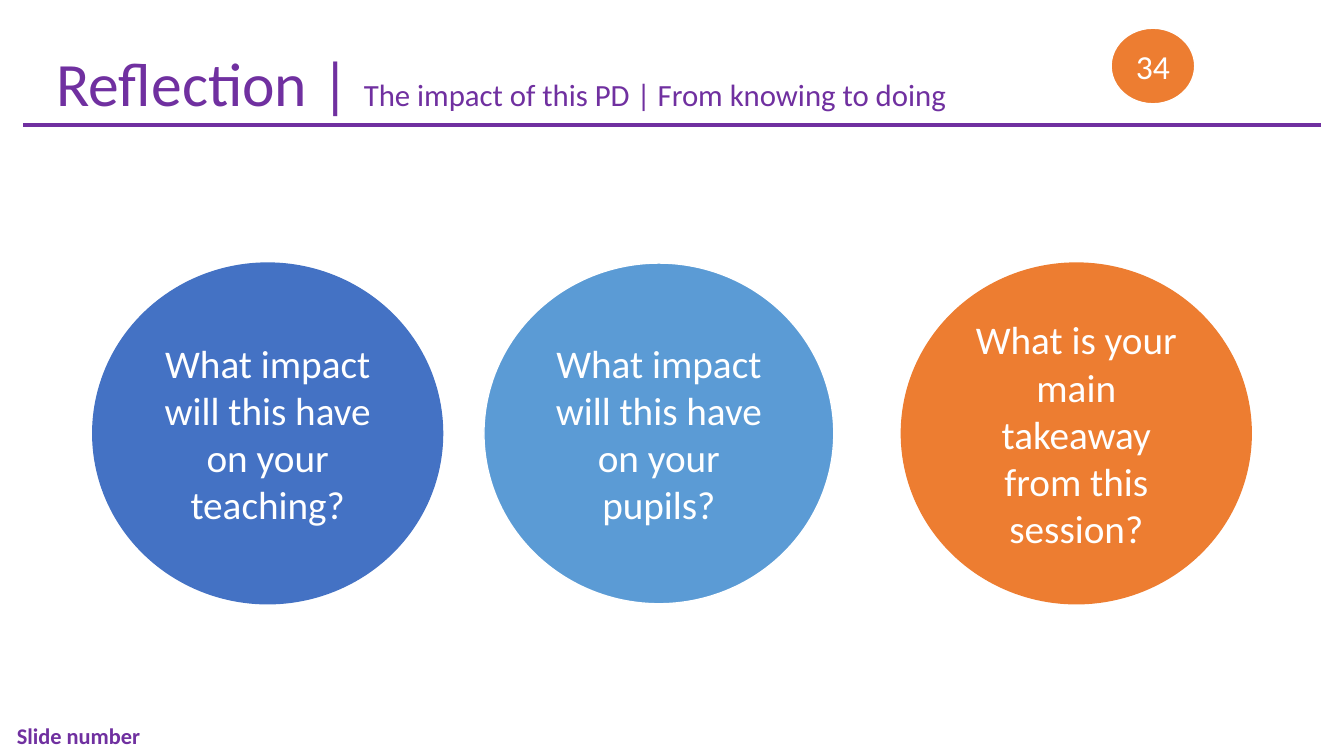
from dataclasses import dataclass

from lxml import etree
from pptx import Presentation
from pptx import util as u
from pptx.dml.color import RGBColor
from pptx.enum import shapes, text
from pptx.oxml.ns import qn

PX = 9144  # EMU per px, 100 px to the inch
FONT = "Calibri"
COLOURS = {
    "purple": "7030A0",
    "blue": "4472C4",
    "sky": "5B9BD5",
    "orange": "ED7D31",
    "white": "FFFFFF",
}


@dataclass(frozen=True)
class Span:
    wording: str
    size: int
    colour: str
    bold: bool = False


@dataclass(frozen=True)
class Circle:
    left: int
    top: int
    width: int
    height: int
    fill: str
    outline: str
    span: Span


@dataclass(frozen=True)
class Label:
    left: int
    top: int
    width: int
    height: int
    anchor: text.MSO_ANCHOR
    spans: tuple[Span, ...]


def question(left: int, fill: str, outline: str, wording: str) -> Circle:
    """Describe one of the three large circles, which share a row and a size."""
    return Circle(left, 261, 347, 338, fill, outline, Span(wording, 28, "white"))


LABELS = (
    Label(7, 710, 300, 40, text.MSO_ANCHOR.MIDDLE,
          (Span("Slide number", 16, "purple", bold=True),)),
    Label(46, 40, 1241, 84, text.MSO_ANCHOR.TOP,
          (Span("Reflection | ", 44, "purple"),
           Span("The impact of this PD | From knowing to doing", 22, "purple"))),
)
CIRCLES = (
    Circle(1102, 28, 83, 75, "orange", "white", Span("34", 24, "white")),
    question(92, "blue", "blue", "What impact will this have on your teaching?"),
    question(480, "sky", "white", "What impact will this have on your pupils?"),
    question(894, "orange", "orange", "What is your main takeaway from this session?"),
)


def px(length: int) -> u.Emu:
    return u.Emu(length * PX)


def rgb(name: str) -> RGBColor:
    return RGBColor.from_string(COLOURS[name])


def write(shape, spans: tuple[Span, ...], anchor: text.MSO_ANCHOR,
          align: text.PP_ALIGN) -> None:
    frame = shape.text_frame
    frame.word_wrap = True
    frame.vertical_anchor = anchor
    para = frame.paragraphs[0]
    para.alignment = align
    for span in spans:
        run = para.add_run()
        run.text = span.wording
        run.font.name = FONT
        run.font.size = u.Pt(span.size)
        run.font.bold = span.bold
        run.font.color.rgb = rgb(span.colour)


def add_label(page, label: Label) -> None:
    box = page.shapes.add_textbox(px(label.left), px(label.top),
                                  px(label.width), px(label.height))
    write(box, label.spans, label.anchor, text.PP_ALIGN.LEFT)


def add_circle(page, circle: Circle) -> None:
    oval = page.shapes.add_shape(shapes.MSO_SHAPE.OVAL, px(circle.left), px(circle.top),
                                 px(circle.width), px(circle.height))
    oval.shadow.inherit = False
    oval.fill.solid()
    oval.fill.fore_color.rgb = rgb(circle.fill)
    oval.line.color.rgb = rgb(circle.outline)
    oval.line.width = u.Pt(1)
    write(oval, (circle.span,), text.MSO_ANCHOR.MIDDLE, text.PP_ALIGN.CENTER)


def add_title_rule(page) -> None:
    rule = page.shapes.add_connector(shapes.MSO_CONNECTOR.STRAIGHT,
                                     px(23), px(124), px(1310), px(124))
    rule.line.color.rgb = rgb("purple")
    rule.line.width = u.Pt(3)
    etree.SubElement(rule._element.spPr, qn("a:effectLst"))


def main() -> None:
    deck = Presentation()
    deck.slide_width, deck.slide_height = px(1333), px(750)
    page = deck.slides.add_slide(deck.slide_layouts[6])
    add_title_rule(page)
    for label in LABELS:
        add_label(page, label)
    for circle in CIRCLES:
        add_circle(page, circle)
    deck.save("out.pptx")


if __name__ == "__main__":
    main()
